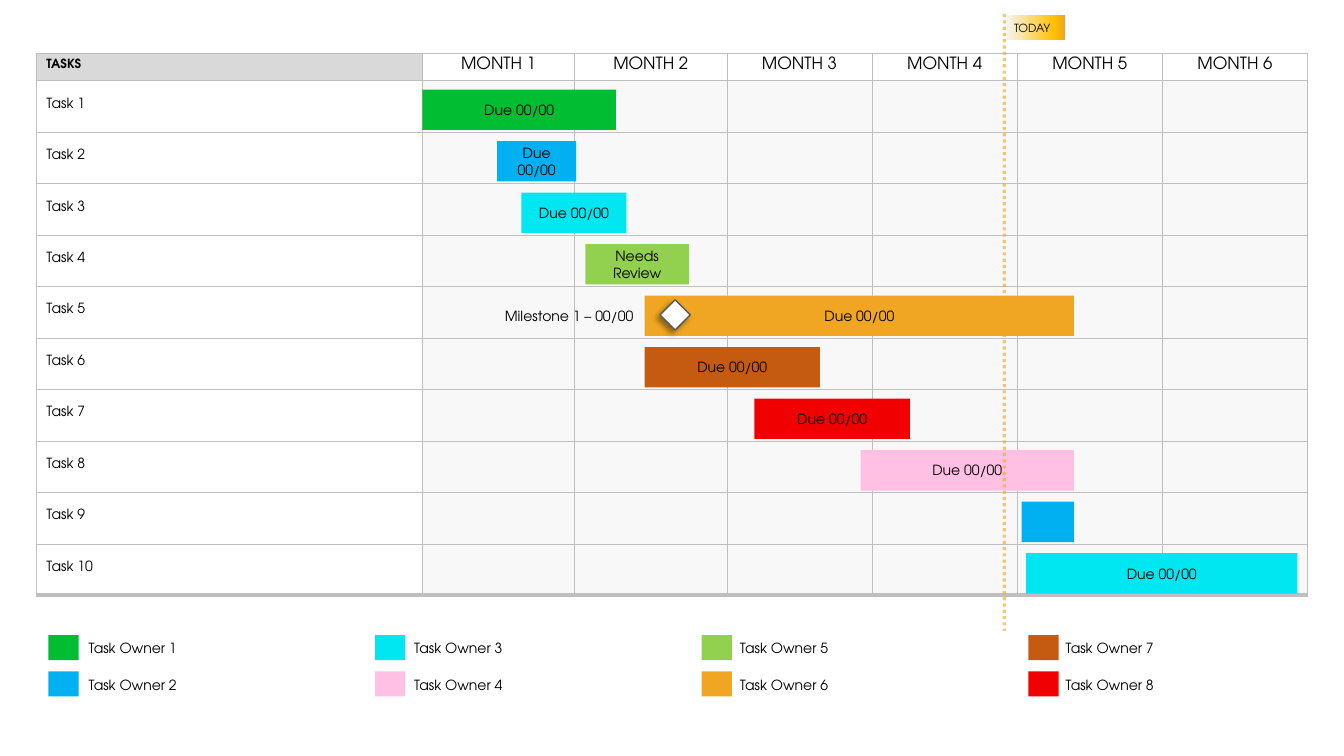
"""Build a six-month Gantt chart slide with task owners, a milestone and a today marker."""
from dataclasses import dataclass
from itertools import accumulate

from lxml import etree
from pptx import Presentation
from pptx import util as u
from pptx.dml.color import RGBColor
from pptx.enum import dml, shapes, text
from pptx.oxml import ns


@dataclass(frozen=True)
class Theme:
    font: str = "TeX Gyre Adventor"
    ink: str = "000000"
    paper: str = "FFFFFF"
    grid: str = "BFBFBF"
    heading: str = "D9D9D9"
    band: str = "F2F2F2"
    today: str = "F0A622"
    outline: str = "595959"
    month_size: int = 12
    body_size: int = 10
    heading_size: int = 9
    today_size: int = 8


THEME = Theme()
TODAY_STOPS = [(0, "F6F8FC"), (83, "FFC000"), (100, THEME.today)]
OWNERS = {
    "Task Owner 1": "00BD32", "Task Owner 2": "00B0F0",
    "Task Owner 3": "00E7F2", "Task Owner 4": "FFC0E3",
    "Task Owner 5": "92D050", "Task Owner 6": "F0A622",
    "Task Owner 7": "C55A11", "Task Owner 8": "F10002",
}
HEADING = "TASKS"
MONTHS = ["MONTH 1", "MONTH 2", "MONTH 3", "MONTH 4", "MONTH 5", "MONTH 6"]
# task, owner number, start and end in months, bar label
TASKS = [
    ("Task 1", 1, 0, 1.27, "Due 00/00"),
    ("Task 2", 2, 0.49, 1.01, "Due 00/00"),
    ("Task 3", 3, 0.65, 1.34, "Due 00/00"),
    ("Task 4", 5, 1.07, 1.75, "Needs Review"),
    ("Task 5", 6, 1.46, 4.39, "Due 00/00"),
    ("Task 6", 7, 1.46, 2.64, "Due 00/00"),
    ("Task 7", 8, 2.19, 3.26, "Due 00/00"),
    ("Task 8", 4, 2.92, 4.39, "Due 00/00"),
    ("Task 9", 2, 4.03, 4.39, ""),
    ("Task 10", 3, 4.06, 5.93, "Due 00/00"),
]
MILESTONE = ("Milestone 1 – 00/00", 4, 1.66)
TODAY = ("TODAY", 3.91)

LEFT, TOP = 0.36, 0.53
TASK_WIDTH, MONTH_WIDTHS = 3.83, [1.51, 1.51, 1.44, 1.44, 1.44, 1.44]
HEAD_HEIGHT, ROW_HEIGHT = 0.27, 0.511
BAR_INSET, BAR_HEIGHT = 0.09, 0.4
EDGES = list(accumulate(MONTH_WIDTHS, initial=LEFT + TASK_WIDTH))
LEGEND_LEFT, LEGEND_TOP, LEGEND_STEP, LEGEND_ROW = 0.48, 6.3, 3.24, 0.36
SWATCH_WIDTH, TAG_HEIGHT = 0.3, 0.25


def month_x(month):
    whole = int(month)
    return EDGES[whole] + (month - whole) * MONTH_WIDTHS[whole]


def bar_y(row):
    return TOP + HEAD_HEIGHT + row * ROW_HEIGHT + BAR_INSET


def inches(*lengths):
    return [u.Inches(length) for length in lengths]


def add_node(parent, tag, **attributes):
    return etree.SubElement(parent, ns.qn(tag), {k: str(v) for k, v in attributes.items()})


def set_alpha(element, percent):
    for color in element.iter(ns.qn("a:srgbClr")):
        add_node(color, "a:alpha", val=percent * 1000)


def write(frame, words, size=THEME.body_size, align=text.PP_ALIGN.LEFT, bold=False):
    frame.text = words
    paragraph = frame.paragraphs[0]
    paragraph.alignment = align
    for run in paragraph.runs:
        run.font.name, run.font.size, run.font.bold = THEME.font, u.Pt(size), bold
        run.font.color.rgb = RGBColor.from_string(THEME.ink)


def add_block(parent, box, color, kind=shapes.MSO_SHAPE.RECTANGLE):
    block = parent.shapes.add_shape(kind, *inches(*box))
    block.shadow.inherit = False
    block.fill.solid()
    block.fill.fore_color.rgb = RGBColor.from_string(color)
    block.line.fill.background()
    block.text_frame.vertical_anchor = text.MSO_ANCHOR.MIDDLE
    return block


def add_label(slide, box, words, align=text.PP_ALIGN.LEFT):
    frame = slide.shapes.add_textbox(*inches(*box)).text_frame
    frame.word_wrap = True
    write(frame, words, align=align)
    return frame


def style_cell(cell, color, alpha, last_row):
    cell.fill.solid()
    cell.fill.fore_color.rgb = RGBColor.from_string(color)
    cell.vertical_anchor = text.MSO_ANCHOR.MIDDLE
    cell.margin_top, cell.margin_bottom = inches(0, 0.04)
    properties = cell._tc.get_or_add_tcPr()
    if alpha < 100:
        set_alpha(properties, alpha)
    for place, side in enumerate("LRTB"):
        width = 3 if last_row and side == "B" else 0.5
        border = add_node(properties, f"a:ln{side}", w=u.Pt(width))
        add_node(add_node(border, "a:solidFill"), "a:srgbClr", val=THEME.grid)
        properties.insert(place, border)


def add_grid(slide):
    height = HEAD_HEIGHT + ROW_HEIGHT * len(TASKS)
    box = inches(LEFT, TOP, TASK_WIDTH + sum(MONTH_WIDTHS), height)
    grid = slide.shapes.add_table(len(TASKS) + 1, len(MONTHS) + 1, *box).table
    grid.first_row = grid.horz_banding = False
    for column, width in zip(grid.columns, [TASK_WIDTH, *MONTH_WIDTHS]):
        column.width = u.Inches(width)
    rows = [[HEADING, *MONTHS]] + [[task[0]] + [""] * len(MONTHS) for task in TASKS]
    for r, words in enumerate(rows):
        grid.rows[r].height = u.Inches(ROW_HEIGHT if r else HEAD_HEIGHT)
        for c, word in enumerate(words):
            if c:
                color, alpha = (THEME.band, 50) if r else (THEME.paper, 75)
            else:
                color, alpha = (THEME.paper if r else THEME.heading), 100
            cell = grid.cell(r, c)
            style_cell(cell, color, alpha, r == len(TASKS))
            size = THEME.body_size if r else THEME.month_size if c else THEME.heading_size
            align = text.PP_ALIGN.CENTER if c else text.PP_ALIGN.LEFT
            write(cell.text_frame, word, size, align, bold=not r and not c)


def add_bars(slide):
    colors = list(OWNERS.values())
    for row, (_, owner, start, end, due) in enumerate(TASKS):
        left = month_x(start)
        box = (left, bar_y(row), month_x(end) - left, BAR_HEIGHT)
        bar = add_block(slide, box, colors[owner - 1])
        write(bar.text_frame, due, align=text.PP_ALIGN.CENTER)


def add_legend(slide):
    for index, (owner, color) in enumerate(OWNERS.items()):
        column, row = divmod(index, 2)
        left, top = LEGEND_LEFT + column * LEGEND_STEP, LEGEND_TOP + row * LEGEND_ROW
        add_block(slide, (left, top, SWATCH_WIDTH, TAG_HEIGHT), color)
        label_left = left + SWATCH_WIDTH - column * 0.01
        frame = add_label(slide, (label_left, top, 2.4, 0.27), owner)
        frame.auto_size = text.MSO_AUTO_SIZE.SHAPE_TO_FIT_TEXT


def add_today(slide):
    words, month = TODAY
    x = month_x(month)
    marker = slide.shapes.add_group_shape()
    tag = add_block(marker, (x, 0.15, 0.6, TAG_HEIGHT), THEME.today)
    tag.fill.gradient()
    tag.fill.gradient_angle = 0
    stops = tag._element.spPr.find(".//" + ns.qn("a:gsLst"))
    stops.clear()
    for share, color in TODAY_STOPS:
        add_node(add_node(stops, "a:gs", pos=share * 1000), "a:srgbClr", val=color)
    write(tag.text_frame, words, THEME.today_size)
    tag.text_frame.word_wrap = False
    rule = marker.shapes.add_connector(shapes.MSO_CONNECTOR.STRAIGHT, *inches(x, 0.14, x, 6.26))
    rule.line.color.rgb = RGBColor.from_string(THEME.today)
    rule.line.width = u.Pt(2.25)
    rule.line.dash_style = dml.MSO_LINE.ROUND_DOT
    set_alpha(rule._element.spPr, 60)
    add_node(rule._element.spPr, "a:effectLst")


def add_milestone(slide):
    words, row, month = MILESTONE
    size, top = 0.3, bar_y(row)
    box = (month_x(month) - size / 2, top + 0.04, size, size)
    diamond = add_block(slide, box, THEME.paper, shapes.MSO_SHAPE.DIAMOND)
    diamond.line.color.rgb = RGBColor.from_string(THEME.outline)
    diamond.line.width = u.Pt(1)
    effects = diamond._element.spPr.find(ns.qn("a:effectLst"))
    shadow = add_node(effects, "a:outerShdw", blurRad=u.Pt(4), dist=u.Pt(3), dir=135 * 60000)
    add_node(shadow, "a:srgbClr", val=THEME.ink)
    set_alpha(shadow, 40)
    frame = add_label(slide, (4.21, top, 2.17, BAR_HEIGHT), words, text.PP_ALIGN.RIGHT)
    frame.vertical_anchor = text.MSO_ANCHOR.MIDDLE


def main():
    deck = Presentation()
    deck.slide_width, deck.slide_height = inches(13.33, 7.5)
    slide = deck.slides.add_slide(deck.slide_layouts[6])
    for add_part in (add_grid, add_bars, add_legend, add_today, add_milestone):
        add_part(slide)
    deck.save("out.pptx")


if __name__ == "__main__":
    main()
